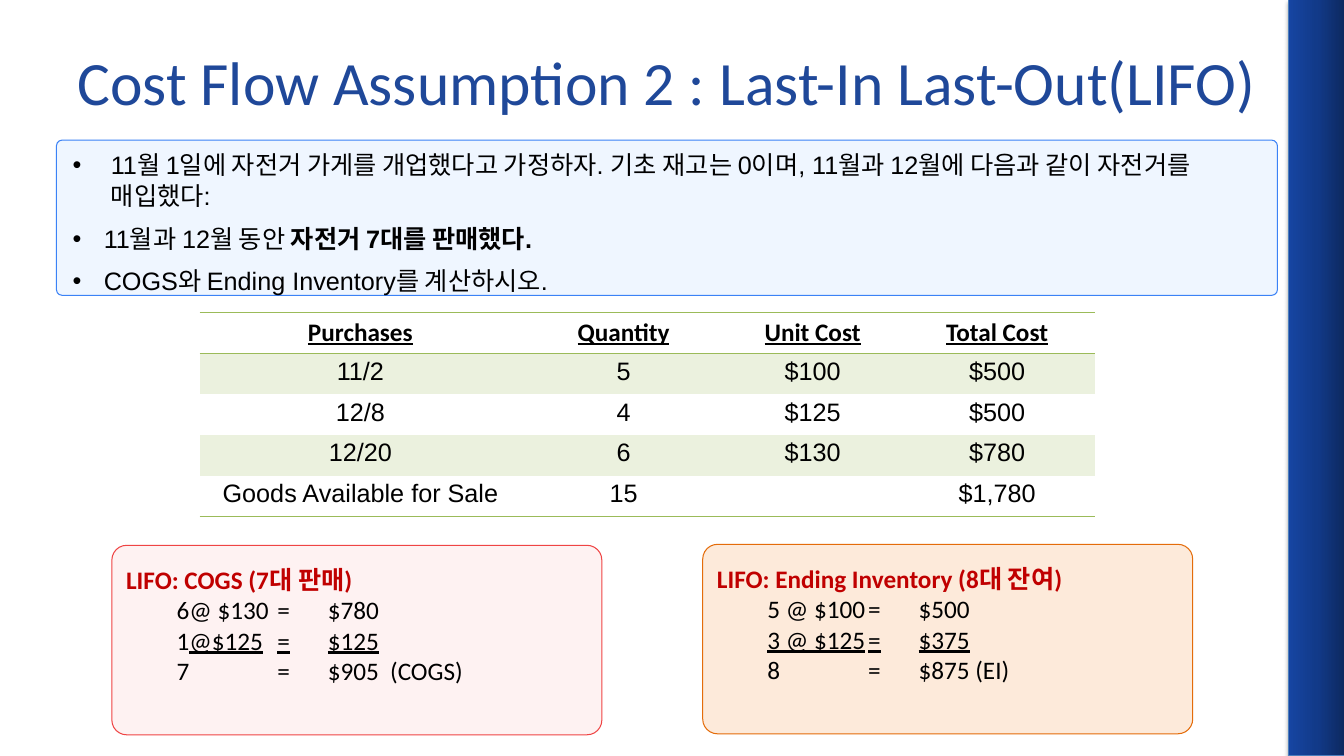
"""Build a slide that works through the LIFO cost flow assumption."""
from copy import deepcopy

from lxml import etree
from pptx import Presentation
from pptx.dml.color import RGBColor
from pptx.enum.shapes import MSO_SHAPE
from pptx.enum.text import MSO_ANCHOR, PP_ALIGN
from pptx.oxml.ns import qn
from pptx.util import Inches, Pt

RECT, ROUNDED = MSO_SHAPE.RECTANGLE, MSO_SHAPE.ROUNDED_RECTANGLE
MIDDLE, TOP = MSO_ANCHOR.MIDDLE, MSO_ANCHOR.TOP
CENTER, LEFT = PP_ALIGN.CENTER, PP_ALIGN.LEFT

TITLE = "Cost Flow Assumption 2 : Last-In Last-Out(LIFO)"
BULLETS = [
    (0.38, [("11월 1일에 자전거 가게를 개업했다고 가정하자. 기초 재고는 0이며, "
             "11월과 12월에 다음과 같이 자전거를 매입했다:", False)]),
    (0.31, [("11월과 12월 동안 ", False), ("자전거 7대를 판매했다.", True)]),
    (0.31, [("COGS와 Ending Inventory를 계산하시오.", False)]),
]
PURCHASES = [
    ("Purchases", "Quantity", "Unit Cost", "Total Cost"),
    ("11/2", "5", "$100", "$500"),
    ("12/8", "4", "$125", "$500"),
    ("12/20", "6", "$130", "$780"),
    ("Goods Available for Sale", "15", "", "$1,780"),
]
COL_WIDTHS = [3.19, 2.03, 1.72, 1.94]
ROW_HEIGHT = 0.405
PANELS = [
    ((1.11, 5.41), "FEF2F2", "EF4444", 0.35, "LIFO: COGS (7대 판매)", [
        ("\t6@ $130\t=\t$780", ""),
        ("\t1", "@$125\t=\t$125"),
        ("\t7\t\t=\t$905  (COGS)", "")]),
    ((6.97, 5.4), "FDEADA", "E46C0A", 0.35, "LIFO: Ending Inventory (8대 잔여)", [
        ("\t5 @ $100\t=\t$500", ""),
        ("\t", "3 @ $125\t=\t$375"),
        ("\t8\t\t=\t$875 (EI)", "")]),
]
TAB_STEP, TAB_COUNT = 0.5, 4
SIDEBAR_STOPS = [(0, "0D2960"), (0.5, "123A89"), (1, "1645A2")]
GREEN, PALE_GREEN = "9BBB59", "EBF1DE"
NO_STYLE = "{2D5ABB26-0587-4C30-8999-92F81FD0307C}"


def rgb(value):
    return RGBColor.from_string(value)


def add_box(s, kind, at, fill, line, adj=None):
    sp = s.shapes.add_shape(kind, *map(Inches, at))
    sp.shadow.inherit = False
    if adj is not None:
        sp.adjustments[0] = adj
    if fill:
        sp.fill.solid()
        sp.fill.fore_color.rgb = rgb(fill)
    sp.line.color.rgb = rgb(line)
    sp.line.width = Pt(0.75)
    return sp


def add_text_box(s, at, anchor):
    tf = s.shapes.add_textbox(*map(Inches, at)).text_frame
    tf.word_wrap = True
    tf.vertical_anchor = anchor
    return tf


def style(font, name, color="000000", size=18, bold=False, underline=False):
    font.name, font.size = name, Pt(size)
    font.bold, font.underline = bold, underline
    font.color.rgb = rgb(color)


def add_run(p, text, name, **look):
    r = p.add_run()
    r.text = text
    style(r.font, name, **look)


def next_paragraph(tf, i):
    return tf.add_paragraph() if i else tf.paragraphs[0]


def add_sidebar(s):
    sp = add_box(s, RECT, (12.78, 0, 0.56, 7.5), None, "4B7EBC")
    sp.fill.gradient()
    sp.fill.gradient_angle = 180
    spPr = sp._element.spPr
    stops = spPr.find(".//" + qn("a:gsLst"))
    stops.insert(1, deepcopy(stops[0]))
    for stop, (position, color) in zip(sp.fill.gradient_stops, SIDEBAR_STOPS):
        stop.position = position
        stop.color.rgb = rgb(color)
    shadow = etree.SubElement(spPr.find(qn("a:effectLst")), qn("a:outerShdw"),
                              blurRad=str(Pt(3.1)), dist=str(Pt(1.8)),
                              dir="5400000", rotWithShape="0")
    black = etree.SubElement(shadow, qn("a:srgbClr"), val="000000")
    etree.SubElement(black, qn("a:alpha"), val="35000")


def add_bullets(s):
    add_box(s, ROUNDED, (0.56, 1.39, 12.11, 1.54), "EFF6FF", "3B82F6", 0.037)
    tf = add_text_box(s, (0.72, 1.47, 11.86, 1.42), TOP)
    tf.margin_left = tf.margin_right = tf.margin_top = tf.margin_bottom = 0
    for i, (indent, parts) in enumerate(BULLETS):
        p = next_paragraph(tf, i)
        pPr = p._p.get_or_add_pPr()
        pPr.set("marL", str(Inches(indent)))
        pPr.set("indent", str(-Inches(indent)))
        etree.SubElement(pPr, qn("a:buFont"), typeface="Arial")
        etree.SubElement(pPr, qn("a:buChar"), char="•")
        p.line_spacing, p.space_after = Pt(22.4), Pt(8)
        for text, bold in parts:
            add_run(p, text, "Arial", bold=bold)


def add_border(cell, side):
    ln = etree.Element(qn("a:" + side), w=str(Pt(1)))
    fill = etree.SubElement(ln, qn("a:solidFill"))
    etree.SubElement(fill, qn("a:srgbClr"), val=GREEN)
    return ln


def add_purchases(s):
    rows, cols = len(PURCHASES), len(COL_WIDTHS)
    size = (sum(COL_WIDTHS), rows * ROW_HEIGHT)
    table = s.shapes.add_table(rows, cols, *map(Inches, (1.98, 3.1) + size)).table
    table.first_row = table.horz_banding = False
    table._tbl.tblPr.find(qn("a:tableStyleId")).text = NO_STYLE
    for column, width in zip(table.columns, COL_WIDTHS):
        column.width = Inches(width)
    for i, values in enumerate(PURCHASES):
        table.rows[i].height = Inches(ROW_HEIGHT)
        header = i == 0
        sides = ["lnT", "lnB"] if header else ["lnB"] if i == rows - 1 else []
        for j, text in enumerate(values):
            cell = table.cell(i, j)
            p = cell.text_frame.paragraphs[0]
            p.alignment = CENTER
            if not header:
                cell.margin_left = cell.margin_right = Inches(0.07)
                cell.margin_top = cell.margin_bottom = 0
                p.line_spacing = 1.15
            if text:
                add_run(p, text, "Calibri" if header else "Arial",
                        bold=header, underline=header)
            if i % 2:
                cell.fill.solid()
                cell.fill.fore_color.rgb = rgb(PALE_GREEN)
            else:
                cell.fill.background()
            tcPr = cell._tc.get_or_add_tcPr()
            for k, side in enumerate(sides):
                tcPr.insert(k, add_border(cell, side))


def add_panel(s, place, fill, line, bottom, heading, steps):
    sp = add_box(s, ROUNDED, place + (4.86, 1.88), fill, line, 0.078)
    tf = sp.text_frame
    tf.vertical_anchor = MIDDLE
    tf.margin_bottom = Inches(bottom)
    p = tf.paragraphs[0]
    p.alignment = LEFT
    add_run(p, heading, "Calibri", color="C00000", bold=True)
    for plain, underlined in steps:
        p = tf.add_paragraph()
        p.alignment = LEFT
        tabs = etree.SubElement(p._p.get_or_add_pPr(), qn("a:tabLst"))
        for n in range(1, TAB_COUNT + 1):
            etree.SubElement(tabs, qn("a:tab"), pos=str(Inches(n * TAB_STEP)), algn="l")
        add_run(p, plain, "Calibri")
        if underlined:
            add_run(p, underlined, "Calibri", underline=True)


def main():
    prs = Presentation()
    prs.slide_width, prs.slide_height = Inches(13.33), Inches(7.5)
    s = prs.slides.add_slide(prs.slide_layouts[6])
    add_sidebar(s)
    tf = add_text_box(s, (0.67, 0.18, 12, 1.25), MIDDLE)
    add_run(tf.paragraphs[0], TITLE, "Calibri", color="1F4899", size=44)
    add_bullets(s)
    add_purchases(s)
    for panel in PANELS:
        add_panel(s, *panel)
    prs.save("out.pptx")


if __name__ == "__main__":
    main()
